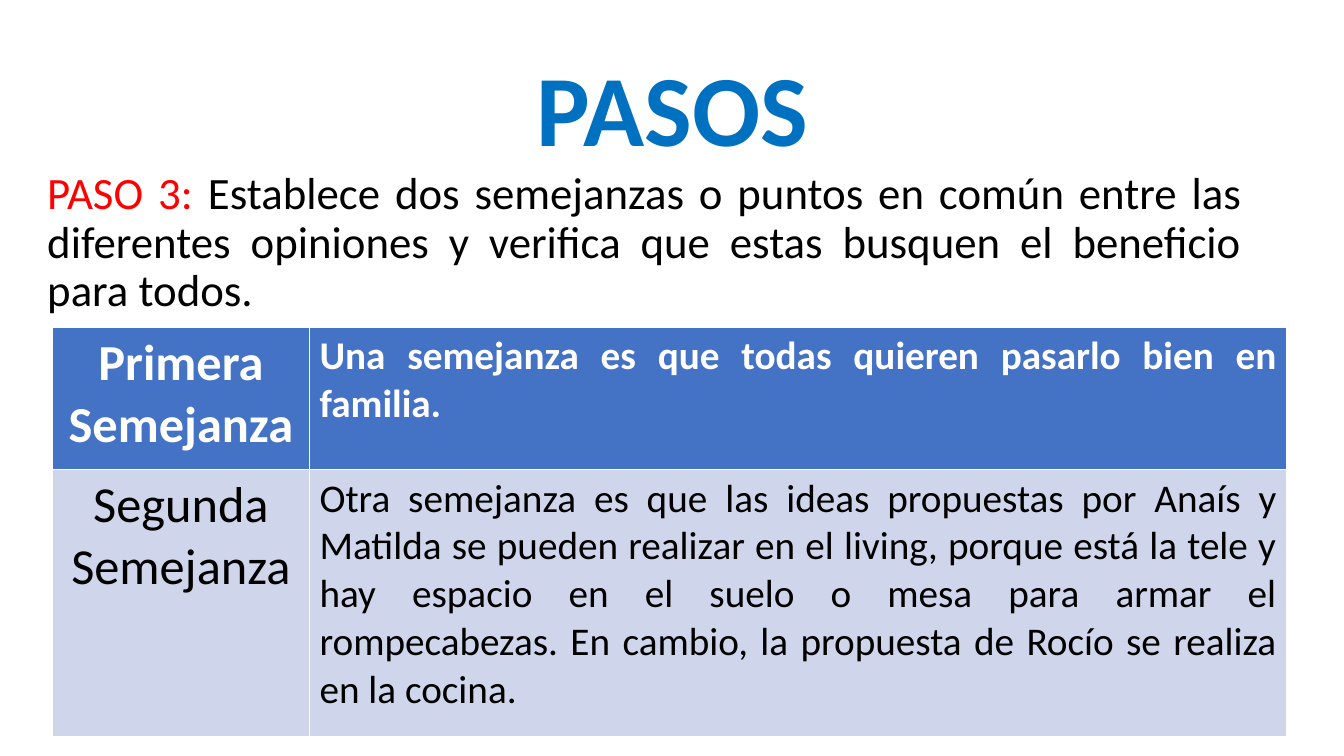
"""Build the PASOS slide: a title, a step instruction and a table of similarities."""
from pptx import Presentation
from pptx.dml.color import RGBColor
from pptx.enum.text import MSO_ANCHOR, PP_ALIGN
from pptx.util import Inches, Pt

CENTER, JUSTIFY = PP_ALIGN.CENTER, PP_ALIGN.JUSTIFY
TOP, MIDDLE = MSO_ANCHOR.TOP, MSO_ANCHOR.MIDDLE

FONT = "Calibri"
COLORS = {"title": "0070C0", "step": "FF0000", "text": "000000",
          "head_text": "FFFFFF", "head_fill": "4472C4", "row_fill": "CFD5EA"}

TITLE = "PASOS"
STEP = [
    ("PASO 3: ", "step"),
    ("Establece dos semejanzas o puntos en común entre las diferentes opiniones "
     "y verifica que estas busquen el beneficio para todos.", "text"),
]
SIMILARITIES = [
    ("Primera Semejanza",
     "Una semejanza es que todas quieren pasarlo bien en familia."),
    ("Segunda Semejanza",
     "Otra semejanza es que las ideas propuestas por Anaís y Matilda se pueden "
     "realizar en el living, porque está la tele y hay espacio en el suelo o mesa "
     "para armar el rompecabezas. En cambio, la propuesta de Rocío se realiza en "
     "la cocina."),
]

SLIDE = (13.33, 7.5)
TITLE_BOX = (0.92, 0.4, 11.5, 1.45)
STEP_BOX = (0.37, 1.65, 12.05, 1.6)
TABLE_AT = (0.52, 3.25)
COL_WIDTHS = (2.55, 9.69)
ROW_HEIGHTS = (1.41, 2.65)
COL_STYLES = ((CENTER, 36), (JUSTIFY, 28))


def write(p, runs, size, align, bold=False):
    p.alignment = align
    for text, color in runs:
        r = p.add_run()
        r.text = text
        r.font.name = FONT
        r.font.size = Pt(size)
        r.font.bold = bold
        r.font.color.rgb = RGBColor.from_string(COLORS[color])


def add_text(slide, box, runs, size, align, anchor, bold=False):
    tf = slide.shapes.add_textbox(*map(Inches, box)).text_frame
    tf.word_wrap = True
    tf.vertical_anchor = anchor
    p = tf.paragraphs[0]
    p.line_spacing = 0.9
    write(p, runs, size, align, bold)


def add_similarities(slide):
    size = (sum(COL_WIDTHS), sum(ROW_HEIGHTS))
    table = slide.shapes.add_table(len(ROW_HEIGHTS), len(COL_WIDTHS),
                                   *map(Inches, TABLE_AT + size)).table
    for column, width in zip(table.columns, COL_WIDTHS):
        column.width = Inches(width)
    for i, texts in enumerate(SIMILARITIES):
        table.rows[i].height = Inches(ROW_HEIGHTS[i])
        head = i == 0
        fill, color = ("head_fill", "head_text") if head else ("row_fill", "text")
        for j, (text, (align, points)) in enumerate(zip(texts, COL_STYLES)):
            cell = table.cell(i, j)
            cell.fill.solid()
            cell.fill.fore_color.rgb = RGBColor.from_string(COLORS[fill])
            write(cell.text_frame.paragraphs[0], [(text, color)], points, align, head)


def main():
    prs = Presentation()
    prs.slide_width, prs.slide_height = map(Inches, SLIDE)
    slide = prs.slides.add_slide(prs.slide_layouts[6])
    add_text(slide, TITLE_BOX, [(TITLE, "title")], 72, CENTER, MIDDLE, True)
    add_text(slide, STEP_BOX, STEP, 32, JUSTIFY, TOP)
    add_similarities(slide)
    prs.save("out.pptx")


if __name__ == "__main__":
    main()
